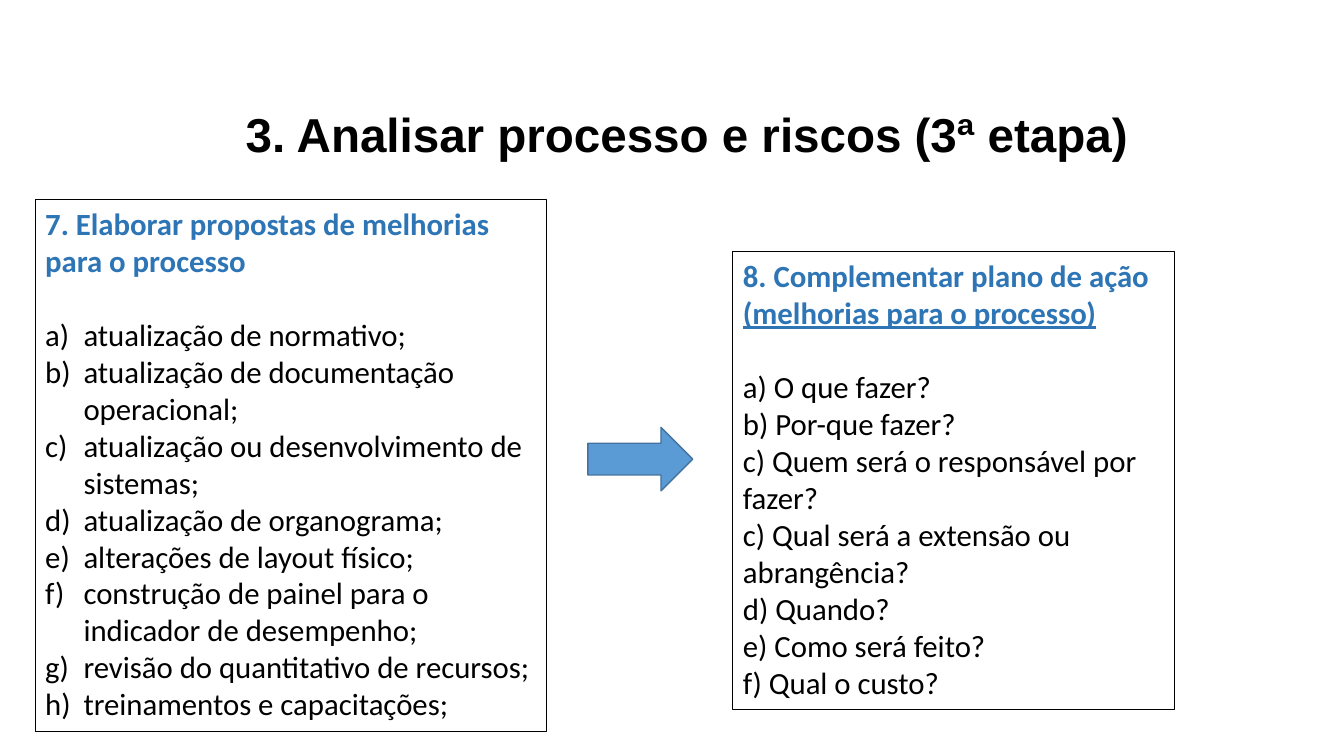
from dataclasses import dataclass

from lxml import etree
from pptx import Presentation
from pptx.dml.color import RGBColor
from pptx.enum.shapes import MSO_SHAPE
from pptx.enum.text import MSO_ANCHOR, MSO_AUTO_SIZE, PP_ALIGN
from pptx.oxml.ns import qn
from pptx.util import Inches, Pt

CENTER, LEFT = PP_ALIGN.CENTER, PP_ALIGN.LEFT
TOP, MIDDLE = MSO_ANCHOR.TOP, MSO_ANCHOR.MIDDLE
FIT_SHAPE, NO_FIT = MSO_AUTO_SIZE.SHAPE_TO_FIT_TEXT, MSO_AUTO_SIZE.NONE
RIGHT_ARROW = MSO_SHAPE.RIGHT_ARROW


@dataclass(frozen=True)
class Theme:
    black = RGBColor.from_string("000000")
    white = RGBColor.from_string("FFFFFF")
    heading = RGBColor.from_string("2E75B6")
    arrow = RGBColor.from_string("5B9BD5")
    arrow_line = RGBColor.from_string("43739E")
    title_font, body_font = "Arial", "Calibri"
    title_size, body_size = Pt(34), Pt(22)
    blank_line = Pt(26.5)
    thin, medium = Pt(0.75), Pt(1)


theme = Theme()
prs = Presentation()
prs.slide_width, prs.slide_height = Inches(13.33), Inches(7.5)


def area(left, top, width, height):
    """Turn percentages of the slide's width and height into lengths."""
    w, h = prs.slide_width / 100, prs.slide_height / 100
    return int(left * w), int(top * h), int(width * w), int(height * h)


def style(run, color, bold=False):
    run.font.name, run.font.size = theme.body_font, theme.body_size
    run.font.color.rgb, run.font.bold = color, bold


s = prs.slides.add_slide(prs.slide_layouts[5])

# Title
title = s.shapes.title
title.left, title.top, title.width, title.height = area(2.25, 14, 97.75, 8.4)
title.fill.solid()
title.fill.fore_color.rgb = theme.white
title.line.color.rgb, title.line.width = theme.white, theme.thin
tf = title.text_frame
tf.text = "3. Analisar processo e riscos (3ª etapa)"
tf.auto_size, tf.vertical_anchor, tf.word_wrap = NO_FIT, MIDDLE, True
p = tf.paragraphs[0]
p.alignment, p.line_spacing = CENTER, 0.9
font = p.runs[0].font
font.name, font.size, font.bold = theme.title_font, theme.title_size, True
font.color.rgb = theme.black

# Step boxes: place, heading, underlined end of heading, items, automatic letters
steps = [
    (area(2.63, 26.4, 38.03, 70.4),
     "7. Elaborar propostas de melhorias para o processo", "",
     ["atualização de normativo;",
      "atualização de documentação operacional;",
      "atualização ou desenvolvimento de sistemas;",
      "atualização de organograma;",
      "alterações de layout físico;",
      "construção de painel para o indicador de desempenho;",
      "revisão do quantitativo de recursos;",
      "treinamentos e capacitações;"], True),
    (area(54.54, 33.33, 32.86, 60.53),
     "8. Complementar plano de ação ", "(melhorias para o processo)",
     ["a) O que fazer?",
      "b) Por-que fazer?",
      "c) Quem será o responsável por fazer?",
      "c) Qual será a extensão ou abrangência?",
      "d) Quando?",
      "e) Como será feito?",
      "f) Qual o custo?"], False),
]
for place, heading, underlined, items, lettered in steps:
    box = s.shapes.add_textbox(*place)
    box.line.color.rgb, box.line.width = theme.black, theme.thin
    tf = box.text_frame
    tf.text = heading
    tf.word_wrap, tf.auto_size, tf.vertical_anchor = True, FIT_SHAPE, TOP
    p = tf.paragraphs[0]
    p.alignment = LEFT
    style(p.runs[0], theme.heading, bold=True)
    if underlined:
        r = p.add_run()
        r.text = underlined
        style(r, theme.heading, bold=True)
        r.font.underline = True
    for i, item in enumerate(items):
        p = tf.add_paragraph()
        p.text, p.alignment = item, LEFT
        if i == 0:
            p.space_before = theme.blank_line
        if lettered:
            pPr = p._p.get_or_add_pPr()
            pPr.set("marL", str(Inches(0.38)))
            pPr.set("indent", str(-Inches(0.38)))
            etree.SubElement(pPr, qn("a:buFont"), typeface="+mj-lt")
            etree.SubElement(pPr, qn("a:buAutoNum"), type="alphaLcParenR")
        style(p.runs[0], theme.black)

# Arrow from step 7 to step 8
arrow = s.shapes.add_shape(RIGHT_ARROW, *area(43.74, 56.53, 7.8, 8.4))
arrow.shadow.inherit = False
arrow.fill.solid()
arrow.fill.fore_color.rgb = theme.arrow
arrow.line.color.rgb, arrow.line.width = theme.arrow_line, theme.medium

prs.save("out.pptx")
